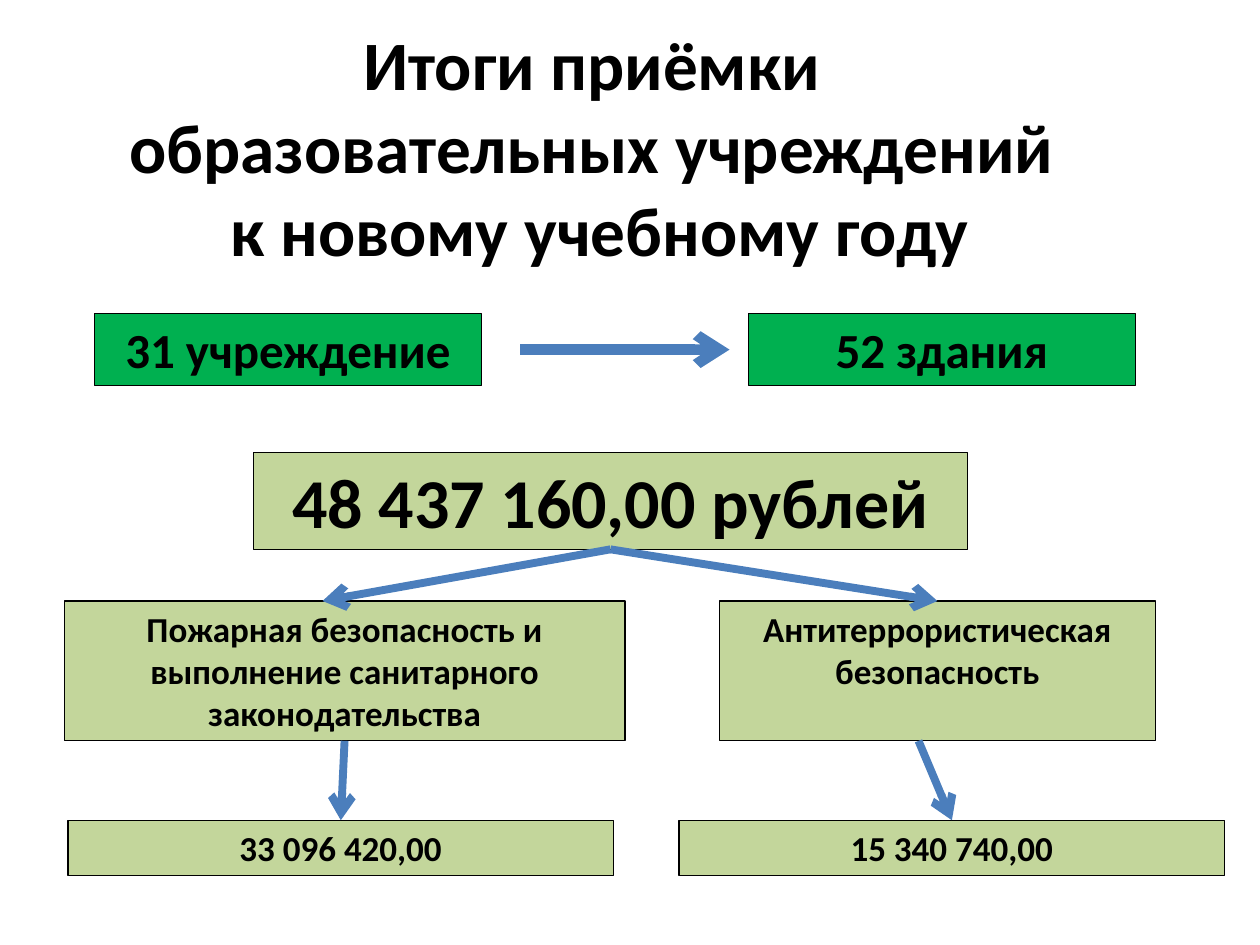
from lxml import etree
from pptx import Presentation
from pptx.dml.color import RGBColor
from pptx.enum.shapes import MSO_CONNECTOR, MSO_SHAPE
from pptx.enum.text import MSO_ANCHOR, MSO_AUTO_SIZE, PP_ALIGN
from pptx.oxml.ns import qn
from pptx.util import Inches, Pt

FONT = "Calibri"
COLORS = {"text": "000000", "border": "000000", "count": "00B050",
          "money": "C3D69B", "arrow": "4B7EBC"}
TOP, BOTTOM = 0, 2


def color(name):
    return RGBColor.from_string(COLORS[name])


def write(paragraph, lines, size):
    paragraph.alignment = PP_ALIGN.CENTER
    for number, line in enumerate(lines):
        if number:
            paragraph.add_line_break()
        run = paragraph.add_run()
        run.text = line
        run.font.name = FONT
        run.font.size = Pt(size)
        run.font.bold = True
        run.font.color.rgb = color("text")


def add_title(slide, left, top, width, height, lines):
    title = slide.shapes.title
    title.left, title.top = Inches(left), Inches(top)
    title.width, title.height = Inches(width), Inches(height)
    frame = title.text_frame
    frame.word_wrap = True
    frame.auto_size = MSO_AUTO_SIZE.NONE
    frame.vertical_anchor = MSO_ANCHOR.MIDDLE
    write(frame.paragraphs[0], lines, 39.6)


def add_box(slide, left, top, width, height, text, size, fill):
    box = slide.shapes.add_shape(MSO_SHAPE.RECTANGLE, Inches(left), Inches(top),
                                 Inches(width), Inches(height))
    box.shadow.inherit = False
    box.fill.solid()
    box.fill.fore_color.rgb = color(fill)
    box.line.color.rgb = color("border")
    box.line.width = Pt(0.75)
    frame = box.text_frame
    frame.word_wrap = True
    frame.vertical_anchor = MSO_ANCHOR.TOP
    write(frame.paragraphs[0], [text], size)
    return box


def add_arrow(slide, start, end, weight=4.5, source=None, target=None):
    """Draw an arrow, joined to the bottom of source and the top of target."""
    arrow = slide.shapes.add_connector(MSO_CONNECTOR.STRAIGHT,
                                       *map(Inches, start + end))
    if source is not None:
        arrow.begin_connect(source, BOTTOM)
    if target is not None:
        arrow.end_connect(target, TOP)
    arrow.line.color.rgb = color("arrow")
    arrow.line.width = Pt(weight)
    etree.SubElement(arrow.line._get_or_add_ln(), qn("a:tailEnd"), type="arrow")
    etree.SubElement(arrow._element.spPr, qn("a:effectLst"))


def add_counts(slide, left, top, width, height):
    box_width = 3.07
    for box_left, text in ((left, "31 учреждение"),
                           (left + width - box_width, "52 здания")):
        add_box(slide, box_left, top, box_width, height, text, 28, "count")
    middle = top + height / 2
    add_arrow(slide, (left + 3.38, middle), (left + 5.04, middle), weight=6)


def add_spending(slide, left, top):
    """Place the total and, under it, its two purposes with their amounts."""
    purpose_top, purpose_height = top + 1.18, 1.11
    purpose_bottom, amount_top = purpose_top + purpose_height, top + 2.92
    amount_width, amount_height = 4.33, 0.44

    total = add_box(slide, left + 1.5, top, 5.67, 0.77,
                    "48 437 160,00 рублей", 40, "money")
    fire = add_box(slide, left, purpose_top, 4.45, purpose_height,
                   "Пожарная безопасность и выполнение санитарного законодательства",
                   20, "money")
    antiterror = add_box(slide, left + 5.2, purpose_top, 3.46, purpose_height,
                         "Антитеррористическая безопасность", 20, "money")
    fire_amount = add_box(slide, left + 0.03, amount_top, amount_width,
                          amount_height, "33 096 420,00", 20, "money")
    antiterror_amount = add_box(slide, left + 4.88, amount_top, amount_width,
                                amount_height, "15 340 740,00", 20, "money")

    total_end = (left + 4.33, top + 0.77)
    add_arrow(slide, total_end, (left + 2.05, purpose_top), source=total)
    add_arrow(slide, total_end, (left + 6.93, purpose_top),
              source=total, target=antiterror)
    add_arrow(slide, (left + 2.23, purpose_bottom), (left + 2.2, amount_top),
              source=fire, target=fire_amount)
    add_arrow(slide, (left + 6.78, purpose_bottom), (left + 7.05, amount_top),
              target=antiterror_amount)


def main():
    presentation = Presentation()
    presentation.slide_width, presentation.slide_height = Inches(10), Inches(7.5)
    slide = presentation.slides.add_slide(presentation.slide_layouts[5])
    add_title(slide, 0.51, 0.21, 8.5, 1.89,
              ["Итоги приёмки ", "образовательных учреждений ",
               "к новому учебному году"])
    add_counts(slide, 0.75, 2.49, 8.26, 0.57)
    add_spending(slide, 0.51, 3.59)
    presentation.save("out.pptx")


if __name__ == "__main__":
    main()
